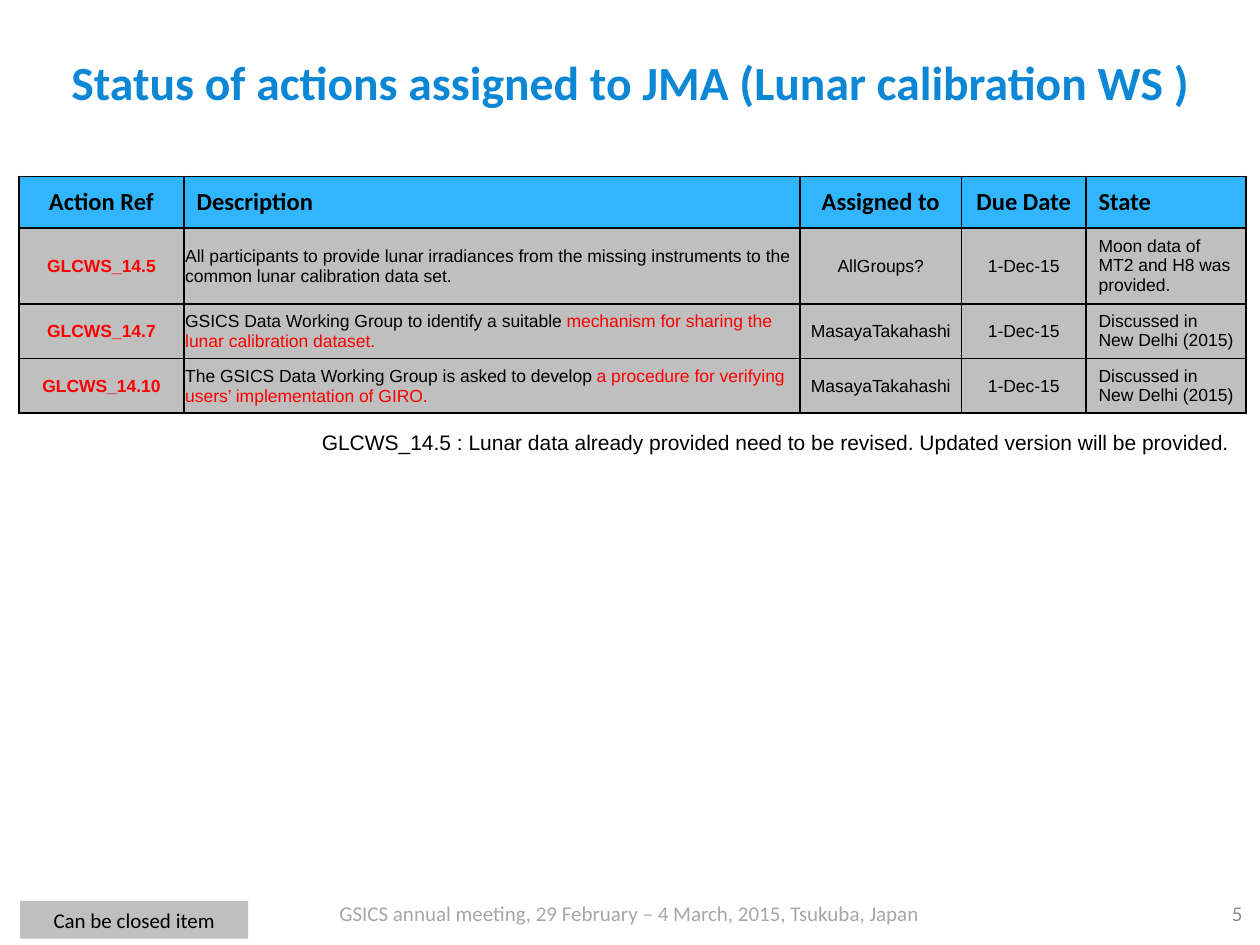
from lxml import etree
from pptx import Presentation
from pptx.dml.color import RGBColor
from pptx.enum import shapes, text
from pptx.oxml import ns
from pptx.util import Inches, Pt

COLORS = {
    "title": "0B87D6", "header": "31B6FD", "body": "BFBFBF", "black": "000000",
    "red": "FF0000", "footer": "A6A6A6", "number": "8C8C8C",
}
LEFT, CENTER, RIGHT = text.PP_ALIGN.LEFT, text.PP_ALIGN.CENTER, text.PP_ALIGN.RIGHT
TOP, MIDDLE = text.MSO_ANCHOR.TOP, text.MSO_ANCHOR.MIDDLE

TITLE = "Status of actions assigned to JMA (Lunar calibration WS )"
HEADERS = ["Action Ref", "Description", "Assigned to", "Due Date", "State"]
ACTIONS = [
    ("GLCWS_14.5",
     ["All participants to provide lunar irradiances from the missing instruments "
      "to the common lunar calibration data set."],
     "AllGroups?", "1-Dec-15", "Moon data of MT2 and H8 was provided."),
    ("GLCWS_14.7",
     ["GSICS Data Working Group to identify a suitable ",
      "mechanism for sharing the lunar calibration dataset."],
     "MasayaTakahashi", "1-Dec-15", "Discussed in New Delhi (2015)"),
    ("GLCWS_14.10",
     ["The GSICS Data Working Group is asked to develop ",
      "a procedure for verifying users’ implementation of GIRO."],
     "MasayaTakahashi", "1-Dec-15", "Discussed in New Delhi (2015)"),
]
NOTE = ("GLCWS_14.5 : Lunar data already provided need to be revised. "
        "Updated version will be provided.")
FOOTER = "GSICS annual meeting, 29 February – 4 March, 2015, Tsukuba, Japan"

COL_WIDTHS = [1.31, 4.89, 1.28, 0.99, 1.27]
ROW_HEIGHTS = [0.41, 0.6, 0.43, 0.43]
COL_ALIGNS = [CENTER, LEFT, CENTER, CENTER, LEFT]


def rgb(name):
    return RGBColor.from_string(COLORS[name])


def write(tf, parts, size=12, font="Calibri", colors=("black",), bold=False, align=LEFT):
    tf.word_wrap = True
    p = tf.paragraphs[0]
    p.alignment = align
    for part, color in zip(parts, colors):
        r = p.add_run()
        r.text = part
        r.font.size, r.font.name, r.font.bold = Pt(size), font, bold
        r.font.color.rgb = rgb(color)


def add_text(slide, box, content, anchor=TOP, **style):
    sp = slide.shapes.add_textbox(*map(Inches, box))
    sp.text_frame.vertical_anchor = anchor
    write(sp.text_frame, [content], **style)


def style_cell(cell, fill):
    cell.vertical_anchor = MIDDLE
    tc_pr = cell._tc.get_or_add_tcPr()
    for side in ("a:lnL", "a:lnR", "a:lnT", "a:lnB"):
        ln = etree.SubElement(tc_pr, ns.qn(side), w=str(Pt(1)))
        solid = etree.SubElement(ln, ns.qn("a:solidFill"))
        etree.SubElement(solid, ns.qn("a:srgbClr"), val=COLORS["black"])
    cell.fill.solid()
    cell.fill.fore_color.rgb = rgb(fill)


def add_actions(slide):
    frame = slide.shapes.add_table(
        len(ROW_HEIGHTS), len(COL_WIDTHS), Inches(0.15), Inches(1.4),
        Inches(sum(COL_WIDTHS)), Inches(sum(ROW_HEIGHTS)))
    table = frame.table
    for col, width in zip(table.columns, COL_WIDTHS):
        col.width = Inches(width)
    for row, height in zip(table.rows, ROW_HEIGHTS):
        row.height = Inches(height)
    for c, (header, align) in enumerate(zip(HEADERS, COL_ALIGNS)):
        cell = table.cell(0, c)
        style_cell(cell, "header")
        write(cell.text_frame, [header], size=14, bold=True, align=align)
    for r, action in enumerate(ACTIONS, 1):
        for c, (content, align) in enumerate(zip(action, COL_ALIGNS)):
            cell = table.cell(r, c)
            style_cell(cell, "body")
            if HEADERS[c] != "State":
                cell.margin_left = cell.margin_right = cell.margin_top = Inches(0.01)
                cell.margin_bottom = 0
            is_ref = c == 0
            write(cell.text_frame, content if isinstance(content, list) else [content],
                  size=10, font="Arial", bold=is_ref, align=align,
                  colors=("red",) if is_ref else ("black", "red"))


def main():
    prs = Presentation()
    prs.slide_width, prs.slide_height = Inches(10), Inches(7.5)
    slide = prs.slides.add_slide(prs.slide_layouts[5])

    title = slide.shapes.title
    title.left, title.top, title.width, title.height = map(Inches, (0.35, 0.23, 9.31, 0.84))
    title.text_frame.vertical_anchor = MIDDLE
    write(title.text_frame, [TITLE], size=27.2, colors=("title",), bold=True, align=CENTER)

    add_text(slide, (2.24, 7.05, 5.51, 0.4), FOOTER, MIDDLE, colors=("footer",), align=CENTER)
    add_text(slide, (9.4, 7.05, 0.56, 0.4), "5", MIDDLE, colors=("number",), align=RIGHT)
    add_actions(slide)
    add_text(slide, (1.85, 3.36, 8.01, 0.3), NOTE, font="Arial", align=RIGHT)

    legend = slide.shapes.add_shape(
        shapes.MSO_SHAPE.RECTANGLE, *map(Inches, (0.16, 7.15, 1.81, 0.3)))
    legend.shadow.inherit = False
    legend.fill.solid()
    legend.fill.fore_color.rgb = rgb("body")
    legend.line.fill.background()
    legend.text_frame.vertical_anchor = TOP
    write(legend.text_frame, ["Can be closed item"], align=CENTER)

    prs.save("out.pptx")


if __name__ == "__main__":
    main()
